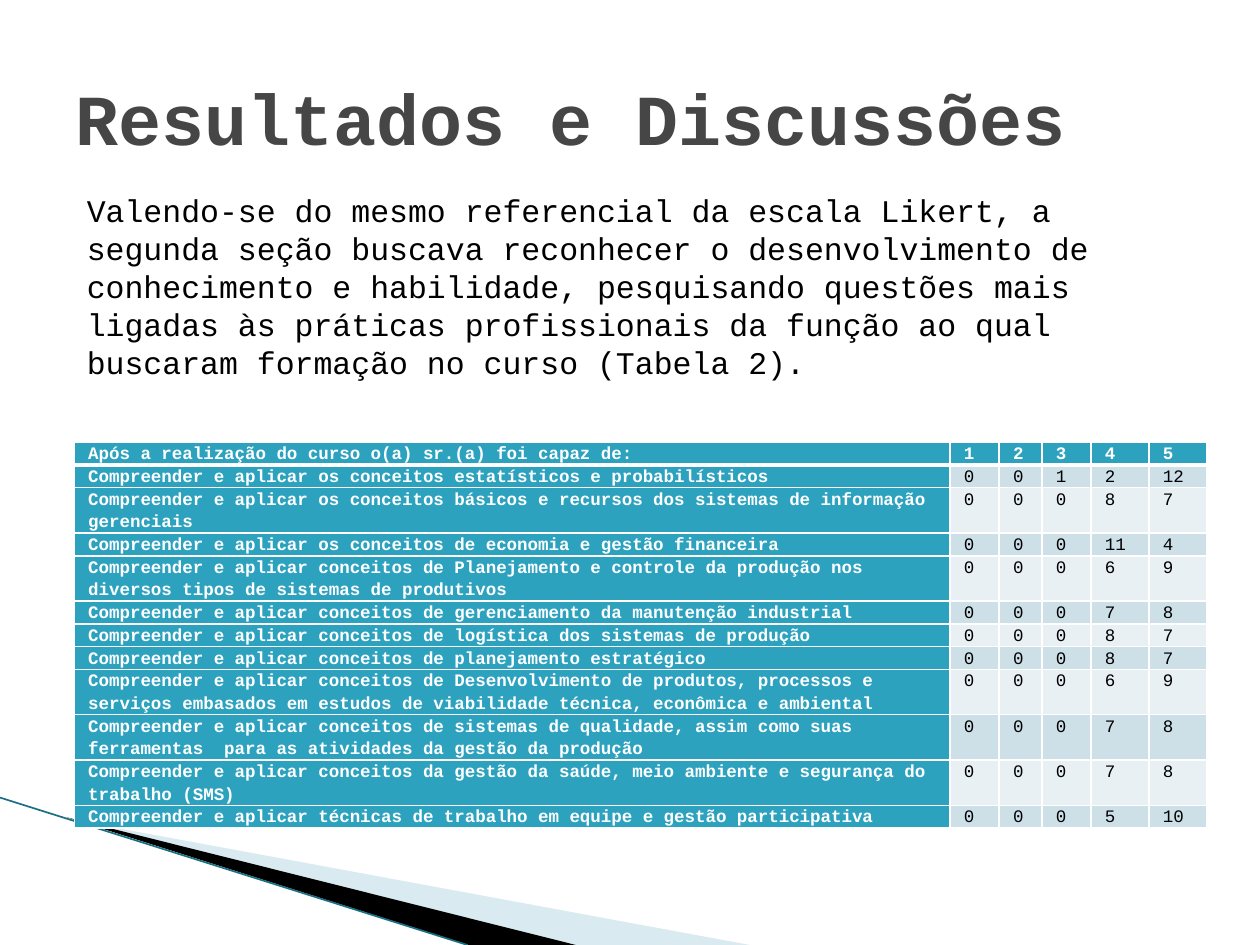
from dataclasses import dataclass

from lxml import etree
from pptx import Presentation
from pptx.dml.color import RGBColor
from pptx.enum.shapes import MSO_CONNECTOR
from pptx.enum.text import MSO_ANCHOR, PP_ALIGN
from pptx.oxml.ns import qn
from pptx.util import Emu, Inches, Pt

STRAIGHT = MSO_CONNECTOR.STRAIGHT
MIDDLE, TOP = MSO_ANCHOR.MIDDLE, MSO_ANCHOR.TOP
LEFT = PP_ALIGN.LEFT
TITLE_ONLY = 5
WIDTH, HEIGHT = Inches(10), Inches(7.5)
FONT = "Courier New"
COLORS = {
    "title": "464646",
    "text": "000000",
    "white": "FFFFFF",
    "accent": "2DA2BF",
    "odd": "CDE0E8",
    "even": "E8F0F4",
    "pale wedge": "A0CBDC",
    "dark wedge": "000000",
    "edge": "1A7083",
}


@dataclass(frozen=True)
class Wedge:
    color: str
    points: tuple[tuple[float, float], ...]
    opacity: int = 100


@dataclass(frozen=True)
class Skill:
    text: str
    votes: tuple[int, ...]
    lines: int = 1


# Positions and sizes are percentages of the slide's width and height.
WEDGES = (
    Wedge("pale wedge", ((5.5, 86.7), (59.5, 100), (45.6, 100)), 40),
    Wedge("dark wedge", ((5.3, 86.5), (45.7, 100), (37.2, 100))),
)
EDGE = ((0, 84.4), (37.1, 100))
TITLE_BOX = (5, 4, 90, 16.67)
INTRO_BOX = (5.9, 19.6, 83.5, 21.6)
TABLE_LEFT, TABLE_TOP = 5.9, 46.8
COLUMNS = (69.5, 3.9, 3.4, 3.9, 4.6, 4.6)
LINE_HEIGHT = 2.4

INTRO = (
    "Valendo-se do mesmo referencial da escala Likert, a segunda seção buscava "
    "reconhecer o desenvolvimento de conhecimento e habilidade, pesquisando "
    "questões mais ligadas às práticas profissionais da função ao qual buscaram "
    "formação no curso (Tabela 2)."
)
ROWS = (
    Skill("Após a realização do curso o(a) sr.(a) foi capaz de:", (1, 2, 3, 4, 5)),
    Skill("Compreender e aplicar os conceitos estatísticos e probabilísticos",
          (0, 0, 1, 2, 12)),
    Skill("Compreender e aplicar os conceitos básicos e recursos dos sistemas de "
          "informação gerenciais", (0, 0, 0, 8, 7), 2),
    Skill("Compreender e aplicar os conceitos de economia e gestão financeira",
          (0, 0, 0, 11, 4)),
    Skill("Compreender e aplicar conceitos de Planejamento e controle da produção "
          "nos diversos tipos de sistemas de produtivos", (0, 0, 0, 6, 9), 2),
    Skill("Compreender e aplicar conceitos de gerenciamento da manutenção industrial",
          (0, 0, 0, 7, 8)),
    Skill("Compreender e aplicar conceitos de logística dos sistemas de produção",
          (0, 0, 0, 8, 7)),
    Skill("Compreender e aplicar conceitos de planejamento estratégico",
          (0, 0, 0, 8, 7)),
    Skill("Compreender e aplicar conceitos de Desenvolvimento de produtos, processos "
          "e serviços embasados em estudos de viabilidade técnica, econômica e "
          "ambiental", (0, 0, 0, 6, 9), 2),
    Skill("Compreender e aplicar conceitos de sistemas de qualidade, assim como suas "
          "ferramentas  para as atividades da gestão da produção", (0, 0, 0, 7, 8), 2),
    Skill("Compreender e aplicar conceitos da gestão da saúde, meio ambiente e "
          "segurança do trabalho (SMS)", (0, 0, 0, 7, 8), 2),
    Skill("Compreender e aplicar técnicas de trabalho em equipe e gestão participativa",
          (0, 0, 0, 5, 10)),
)


def across(percent: float) -> Emu:
    return Emu(round(WIDTH * percent / 100))


def down(percent: float) -> Emu:
    return Emu(round(HEIGHT * percent / 100))


def rgb(name: str) -> RGBColor:
    return RGBColor.from_string(COLORS[name])


def write(frame, text: str, color: str, size: float, bold: bool = False) -> None:
    paragraph = frame.paragraphs[0]
    paragraph.alignment = LEFT
    run = paragraph.add_run()
    run.text = text
    for name, value in {"name": FONT, "size": Pt(size), "bold": bold}.items():
        setattr(run.font, name, value)
    run.font.color.rgb = rgb(color)


def draw_wedge(slide, wedge: Wedge) -> None:
    points = [(across(x), down(y)) for x, y in wedge.points]
    builder = slide.shapes.build_freeform(*points[0])
    builder.add_line_segments(points[1:], close=True)
    shape = builder.convert_to_shape()
    shape.shadow.inherit = False
    shape.line.fill.background()
    shape.fill.solid()
    shape.fill.fore_color.rgb = rgb(wedge.color)
    if wedge.opacity < 100:
        color = shape.fill._xPr.find(f".//{qn('a:srgbClr')}")
        etree.SubElement(color, qn("a:alpha"), val=str(wedge.opacity * 1000))


def draw_edge(slide) -> None:
    (x1, y1), (x2, y2) = EDGE
    edge = slide.shapes.add_connector(
        STRAIGHT, across(x1), down(y1), across(x2), down(y2))
    edge.line.color.rgb = rgb("edge")
    edge.line.width = Pt(0.95)
    etree.SubElement(edge._element.spPr, qn("a:effectLst"))


def add_borders(cell, bottom: float) -> None:
    properties = cell._tc.get_or_add_tcPr()
    for side, width in {"L": 1, "R": 1, "T": 1, "B": bottom}.items():
        line = etree.SubElement(properties, qn(f"a:ln{side}"), w=str(Pt(width)))
        fill = etree.SubElement(line, qn("a:solidFill"))
        etree.SubElement(fill, qn("a:srgbClr"), val=COLORS["white"])


def fill_cell(cell, text: str, row: int, column: int) -> None:
    heading = row == 0 or column == 0
    margins = {"margin_left": Inches(0.11), "margin_right": Inches(0.11),
               "margin_top": 0, "margin_bottom": 0}
    for name, value in margins.items():
        setattr(cell, name, value)
    add_borders(cell, bottom=3 if row == 0 else 1)
    cell.fill.solid()
    cell.fill.fore_color.rgb = rgb(
        "accent" if heading else "odd" if row % 2 else "even")
    write(cell.text_frame, text, "white" if heading else "text", 10, heading)
    cell.text_frame.paragraphs[0].line_spacing = 1.15


def draw_table(slide) -> None:
    total_lines = sum(skill.lines for skill in ROWS)
    table = slide.shapes.add_table(
        len(ROWS), len(COLUMNS), across(TABLE_LEFT), down(TABLE_TOP),
        across(sum(COLUMNS)), down(LINE_HEIGHT * total_lines)).table
    for column, width in zip(table.columns, COLUMNS):
        column.width = across(width)
    for row, skill in enumerate(ROWS):
        table.rows[row].height = down(LINE_HEIGHT * skill.lines)
        for column, value in enumerate((skill.text, *skill.votes)):
            fill_cell(table.cell(row, column), str(value), row, column)


def place(box: tuple[float, ...]) -> tuple[Emu, Emu, Emu, Emu]:
    left, top, width, height = box
    return across(left), down(top), across(width), down(height)


def main() -> None:
    presentation = Presentation()
    presentation.slide_width, presentation.slide_height = WIDTH, HEIGHT
    slide = presentation.slides.add_slide(presentation.slide_layouts[TITLE_ONLY])

    for wedge in WEDGES:
        draw_wedge(slide, wedge)
    draw_edge(slide)
    draw_table(slide)

    title = slide.shapes.title
    title.left, title.top, title.width, title.height = place(TITLE_BOX)
    title.text_frame.vertical_anchor = MIDDLE
    write(title.text_frame, "Resultados e Discussões", "title", 41, bold=True)

    intro = slide.shapes.add_textbox(*place(INTRO_BOX))
    intro.text_frame.word_wrap = True
    intro.text_frame.vertical_anchor = TOP
    write(intro.text_frame, INTRO, "text", 18)

    presentation.save("out.pptx")


if __name__ == "__main__":
    main()
